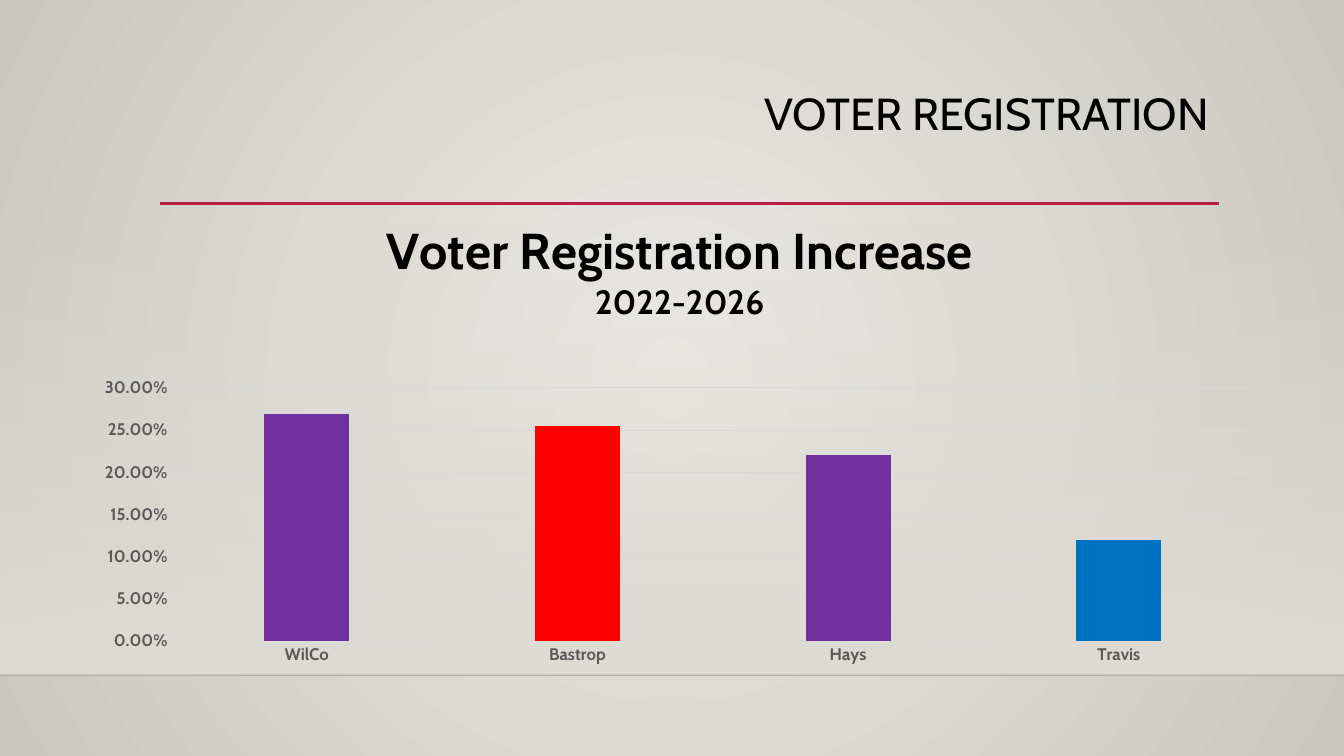
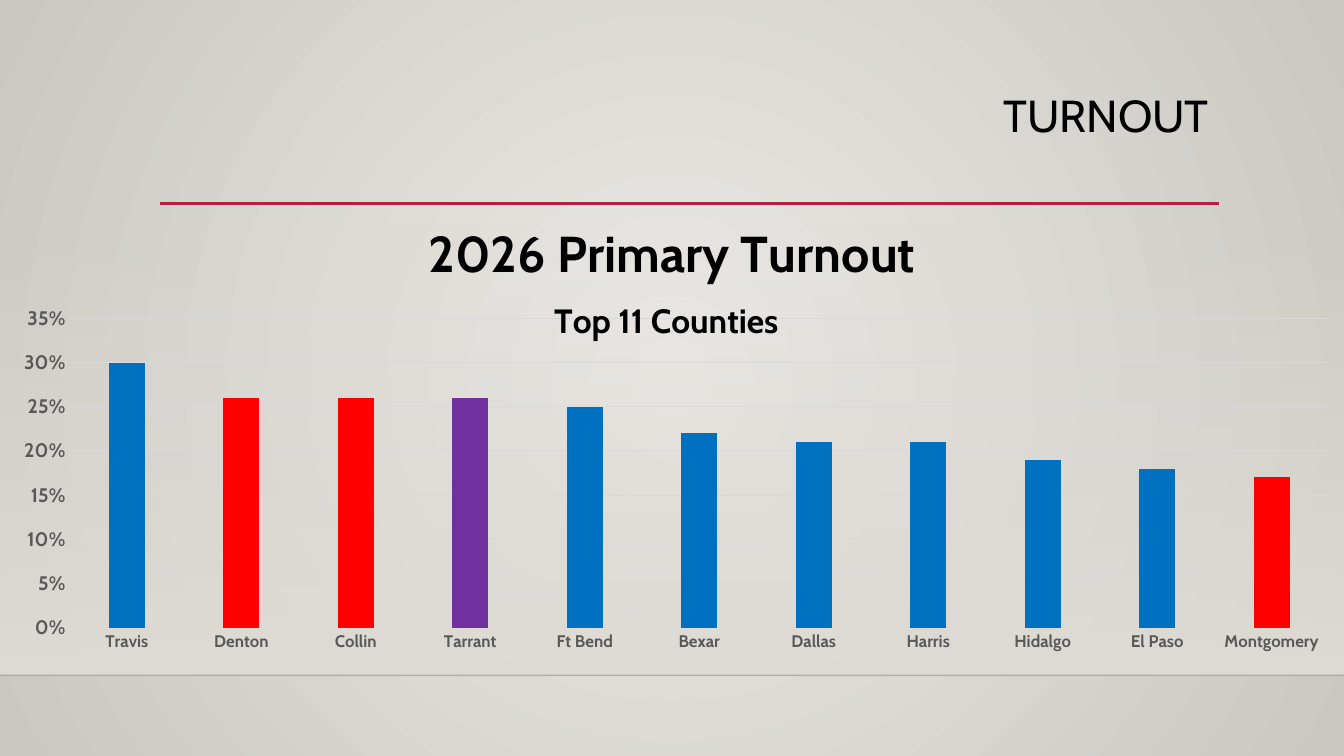
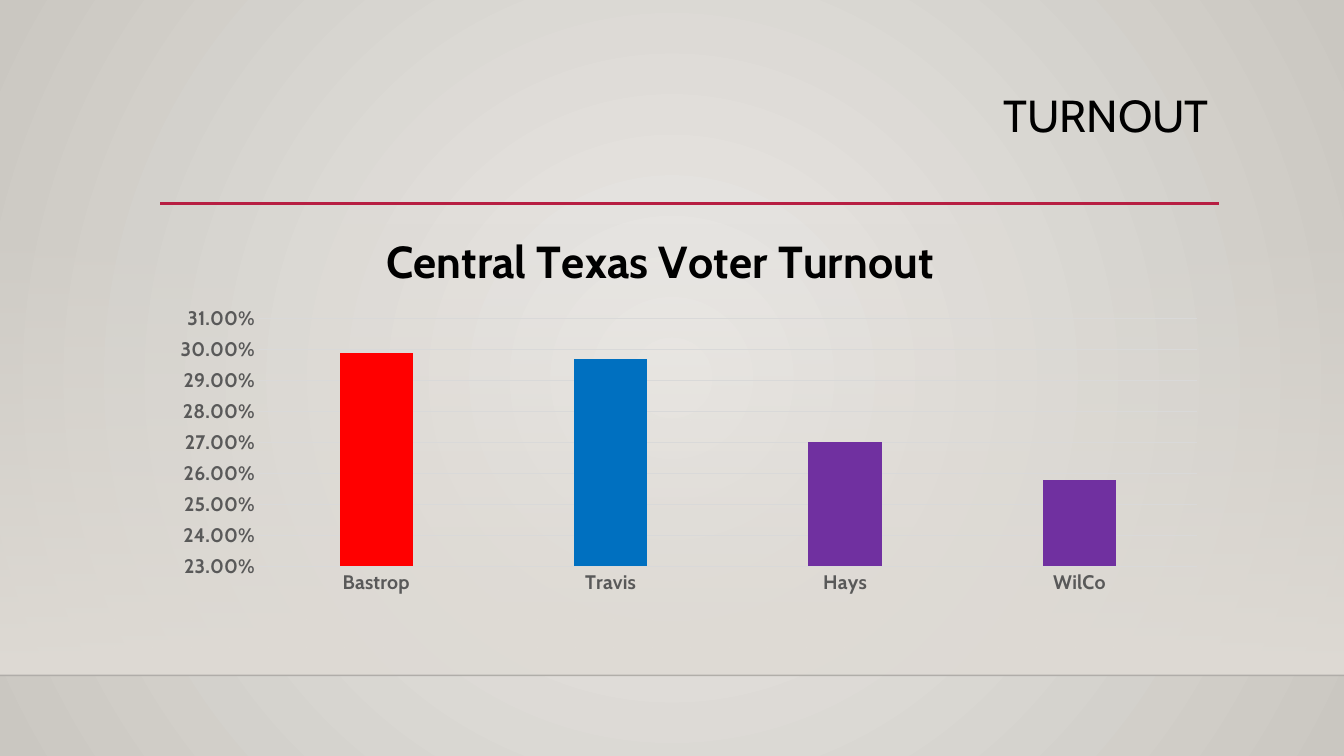
from dataclasses import dataclass

from lxml import etree
from pptx import Presentation
from pptx.chart.data import CategoryChartData
from pptx.dml.color import RGBColor
from pptx.enum.chart import XL_CHART_TYPE as ChartType, XL_TICK_MARK as TickMark
from pptx.enum.shapes import MSO_CONNECTOR as Connector, MSO_SHAPE as Preset
from pptx.enum.text import PP_ALIGN as Align
from pptx.oxml.ns import qn
from pptx.util import Inches, Pt


@dataclass(frozen=True)
class Theme:
    font: str = "Cabin"
    text: str = "000000"
    axis_text: str = "595959"
    grid: str = "D9D9D9"
    accent: str = "B71E42"
    floor_line: str = "000001"
    band: str = "DFDBD5"
    glow: str = "ECEAE7"
    edge: str = "CAC7C1"
    red: str = "FF0000"
    blue: str = "0070C0"
    purple: str = "7030A0"
    heading: int = 32
    chart_title: int = 36
    subtitle: int = 24
    label: int = 12
    large_label: int = 14
    chart_base: int = 10


THEME = Theme()
WIDTH, HEIGHT = 13.33, 7.5
BAND_TOP, BAND_BOTTOM = 2.21, 6.7


def style_font(font, size, color=THEME.text, bold=False):
    values = {"name": THEME.font, "size": Pt(size), "bold": bold}
    for name, value in values.items():
        setattr(font, name, value)
    font.color.rgb = RGBColor.from_string(color)


def set_gradient(fill, *colors):
    fill.gradient()
    for stop, color in zip(fill.gradient_stops, colors):
        stop.color.rgb = RGBColor.from_string(color)


def set_alpha(element, percent):
    """Make the first colour inside the element see-through."""
    color = next(element.iter(qn("a:srgbClr")))
    etree.SubElement(color, qn("a:alpha"), val=str(percent * 1000))


def manual_layout(frame, left, top, size=None):
    """Layout for a chart part, from slide inches to shares of the chart frame."""
    frame_left, frame_top, frame_width, frame_height = frame
    values = {"xMode": "edge", "yMode": "edge",
              "x": round((left - frame_left) / frame_width, 4),
              "y": round((top - frame_top) / frame_height, 4)}
    if size:
        values = {"layoutTarget": "inner", **values,
                  "w": round(size[0] / frame_width, 4),
                  "h": round(size[1] / frame_height, 4)}
    layout = etree.Element(qn("c:layout"))
    manual = etree.SubElement(layout, qn("c:manualLayout"))
    for name, value in values.items():
        etree.SubElement(manual, qn(f"c:{name}"), val=str(value))
    return layout


def drop_layout(element):
    for layout in element.findall(qn("c:layout")):
        element.remove(layout)


class Deck:
    def __init__(self):
        self.presentation = Presentation()
        self.presentation.slide_width = Inches(WIDTH)
        self.presentation.slide_height = Inches(HEIGHT)
        self.slide = None
        self.paint_background()

    def paint_background(self):
        master = self.presentation.slide_master
        set_gradient(master.background.fill, THEME.glow, THEME.edge)
        linear = next(master.element.iter(qn("a:lin")))
        circle = etree.Element(qn("a:path"), path="circle")
        sides = dict.fromkeys("ltrb", "50000")
        etree.SubElement(circle, qn("a:fillToRect"), **sides)
        linear.getparent().replace(linear, circle)

    def add_slide(self, heading, top):
        self.slide = self.presentation.slides.add_slide(
            self.presentation.slide_layouts[6])
        self.band()
        floor = self.rule(0, WIDTH, BAND_BOTTOM, THEME.floor_line, 1)
        set_alpha(floor._element.spPr, 20)
        self.rule(1.59, 12.09, 2.02, THEME.accent, 2.5)
        self.heading(heading, top)

    def band(self):
        band = self.slide.shapes.add_shape(
            Preset.RECTANGLE, 0, Inches(BAND_TOP),
            Inches(WIDTH), Inches(BAND_BOTTOM - BAND_TOP))
        band.shadow.inherit = False
        band.line.fill.background()
        set_gradient(band.fill, THEME.band, THEME.band)
        band.fill.gradient_angle = 270
        set_alpha(band._element.spPr, 0)

    def rule(self, left, right, y, color, width):
        rule = self.slide.shapes.add_connector(
            Connector.STRAIGHT, Inches(left), Inches(y), Inches(right), Inches(y))
        rule.line.color.rgb = RGBColor.from_string(color)
        rule.line.width = Pt(width)
        etree.SubElement(rule._element.spPr, qn("a:effectLst"))
        return rule

    def heading(self, text, top):
        box = self.slide.shapes.add_textbox(
            Inches(1.59), Inches(top), Inches(10.5), Inches(1.15))
        box.text_frame.word_wrap = True
        paragraph = box.text_frame.paragraphs[0]
        paragraph.alignment = Align.RIGHT
        paragraph.line_spacing = 0.9
        run = paragraph.add_run()
        run.text = text
        style_font(run.font, THEME.heading)

    def columns(self, frame, plot, title, bars, scale, number_format,
                label_sizes, title_at=None):
        """Column chart; frame and plot are left, top, width, height on the slide."""
        data = CategoryChartData(number_format=number_format)
        data.categories = [name for name, _, _ in bars]
        data.add_series("Series 1", [value for _, value, _ in bars])
        chart = self.slide.shapes.add_chart(
            ChartType.COLUMN_CLUSTERED, *map(Inches, frame), data).chart
        chart.has_legend = False
        style_font(chart.font, THEME.chart_base)
        self.chart_title(chart, title)
        self.chart_bars(chart.plots[0], [color for _, _, color in bars])
        self.chart_axes(chart, scale, number_format, label_sizes)

        left, top, *size = plot
        area = next(chart._chartSpace.iter(qn("c:plotArea")))
        drop_layout(area)
        area.insert(0, manual_layout(frame, left, top, size))
        if title_at:
            heading = chart.chart_title._element
            drop_layout(heading)
            heading.find(qn("c:tx")).addnext(manual_layout(frame, *title_at))

    def chart_title(self, chart, lines):
        """Each line is a list of (text, size) runs."""
        chart.has_title = True
        frame = chart.chart_title.text_frame
        for index, line in enumerate(lines):
            paragraph = frame.add_paragraph() if index else frame.paragraphs[0]
            style_font(paragraph.font, line[0][1], bold=True)
            for text, size in line:
                run = paragraph.add_run()
                run.text = text
                style_font(run.font, size, bold=True)

    def chart_bars(self, plot, colors):
        for name, value in {"gap_width": 219, "overlap": -27,
                            "vary_by_categories": False}.items():
            setattr(plot, name, value)
        series = plot.series[0]
        series.invert_if_negative = False
        for index, color in enumerate(colors):
            fill = series.points[index].format.fill
            fill.solid()
            fill.fore_color.rgb = RGBColor.from_string(color)

    def chart_axes(self, chart, scale, number_format, label_sizes):
        category, value = chart.category_axis, chart.value_axis
        for axis, size in zip((category, value), label_sizes):
            axis.major_tick_mark = axis.minor_tick_mark = TickMark.NONE
            style_font(axis.tick_labels.font, size, THEME.axis_text, bold=True)
        value.has_major_gridlines = True
        for line in (category.format.line, value.major_gridlines.format.line):
            line.color.rgb = RGBColor.from_string(THEME.grid)
            line.width = Pt(0.75)
        value.format.line.fill.background()
        value.minimum_scale, value.maximum_scale, value.major_unit = scale
        value.tick_labels.number_format = number_format
        value.tick_labels.number_format_is_linked = False


def main():
    deck = Deck()
    red, blue, purple = THEME.red, THEME.blue, THEME.purple

    deck.add_slide("VOTER REGISTRATION", 0.86)
    deck.columns(
        frame=(0.8, 2, 11.88, 4.7), plot=(1.7, 3.85, 10.74, 2.51),
        title=[[("Voter Registration Increase", THEME.chart_title)],
               [("2022-2026", THEME.subtitle)]],
        bars=[("WilCo", 0.269, purple), ("Bastrop", 0.255, red),
              ("Hays", 0.22, purple), ("Travis", 0.12, blue)],
        scale=(0, 0.3, 0.05), number_format="0.00%",
        label_sizes=(THEME.label, THEME.label))

    deck.add_slide("TURNOUT", 0.88)
    deck.columns(
        frame=(0, 2.03, WIDTH, 4.5), plot=(0.69, 3.16, 12.49, 3.07),
        title=[[("2026 Primary Turnout", THEME.chart_title)],
               [("Top 11 Counties", THEME.subtitle), (" ", THEME.chart_title)]],
        bars=[("Travis", 0.3, blue), ("Denton", 0.26, red),
              ("Collin", 0.26, red), ("Tarrant", 0.26, purple),
              ("Ft Bend", 0.25, blue), ("Bexar", 0.22, blue),
              ("Dallas", 0.21, blue), ("Harris", 0.21, blue),
              ("Hidalgo", 0.19, blue), ("El Paso", 0.18, blue),
              ("Montgomery", 0.17, red)],
        scale=(0, 0.35, 0.05), number_format="0%",
        label_sizes=(THEME.label, THEME.large_label))

    deck.add_slide("TURNOUT", 0.88)
    deck.columns(
        frame=(1.59, 2.19, 10.5, 3.77), plot=(2.57, 3.16, 9.3, 2.46),
        title=[[("Central Texas Voter Turnout", THEME.heading)]],
        bars=[("Bastrop", 0.299, red), ("Travis", 0.297, blue),
              ("Hays", 0.27, purple), ("WilCo", 0.258, purple)],
        scale=(0.23, 0.31, 0.01), number_format="0.00%",
        label_sizes=(THEME.large_label, THEME.large_label),
        title_at=(3.75, 2.2))

    deck.presentation.save("out.pptx")


if __name__ == "__main__":
    main()
